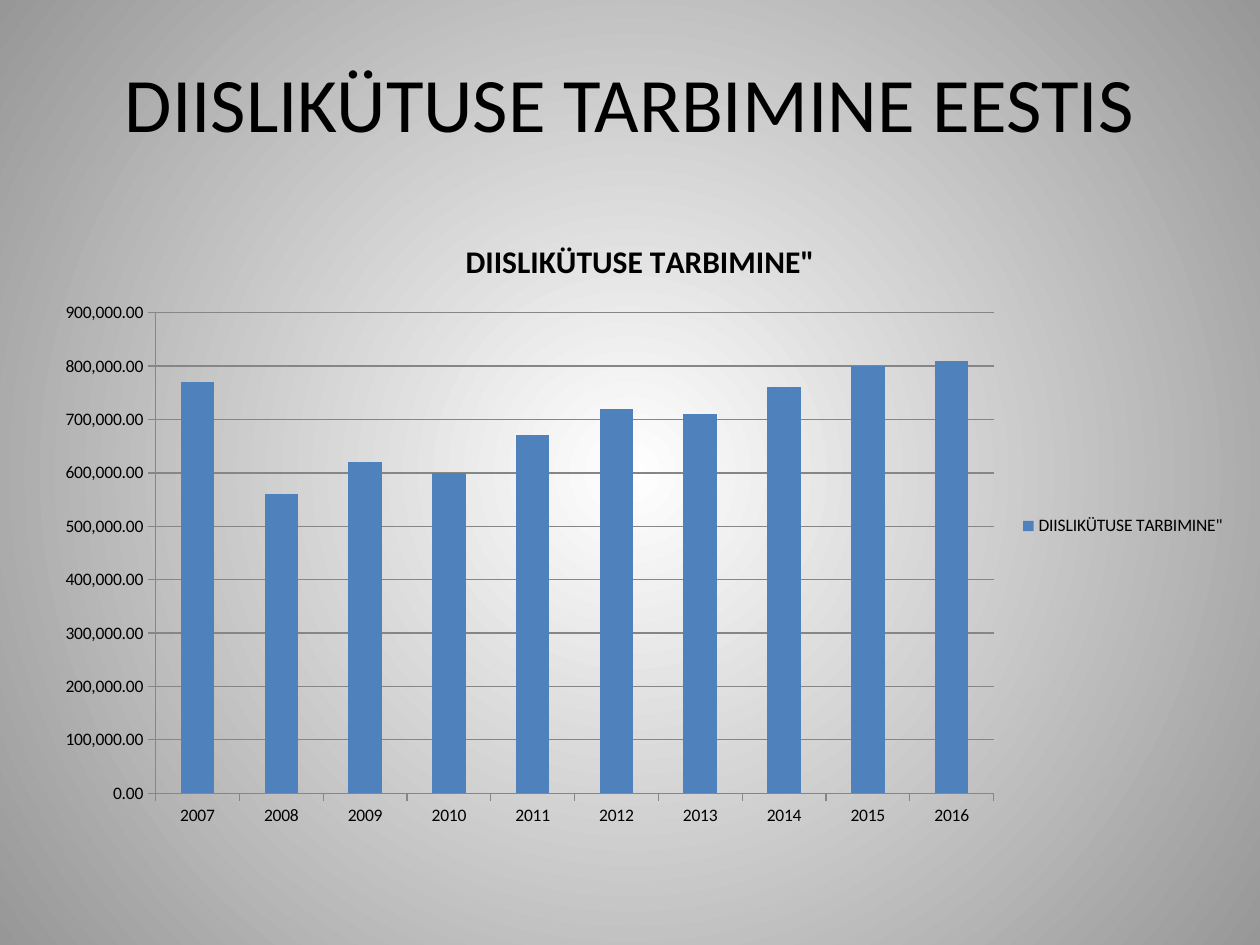
from dataclasses import dataclass

from lxml.etree import SubElement
from pptx import Presentation
from pptx.chart.data import CategoryChartData
from pptx.dml.color import RGBColor
from pptx.enum.chart import XL_CHART_TYPE, XL_LEGEND_POSITION, XL_TICK_MARK
from pptx.enum.text import MSO_ANCHOR, PP_ALIGN
from pptx.oxml.ns import qn
from pptx.util import Inches, Pt


@dataclass(frozen=True)
class Theme:
    font: str = "Calibri"
    text: RGBColor = RGBColor(0, 0, 0)
    bar: RGBColor = RGBColor(0x4F, 0x81, 0xBD)
    line: RGBColor = RGBColor(0x86, 0x86, 0x86)
    center: RGBColor = RGBColor(0xFF, 0xFF, 0xFF)
    edge: RGBColor = RGBColor(0x97, 0x97, 0x97)
    title_size: Pt = Pt(44)
    chart_title_size: Pt = Pt(18)
    label_size: Pt = Pt(10)


THEME = Theme()
HEADING = "DIISLIKÜTUSE TARBIMINE EESTIS"
SERIES_NAME = 'DIISLIKÜTUSE TARBIMINE"'
YEARS = range(2007, 2017)
CONSUMPTION = [770000, 560000, 620000, 600000, 670000,
               720000, 710000, 760000, 800000, 810000]


def set_attributes(target, values):
    for name, value in values.items():
        setattr(target, name, value)


def style_font(font, size, bold=False):
    set_attributes(font, {"name": THEME.font, "size": size, "bold": bold})
    font.color.rgb = THEME.text


def paint_background(slide):
    """Fill the slide with a gradient spreading in circles from its center."""
    fill = slide.background.fill
    fill.gradient()
    for stop, color in zip(fill.gradient_stops, (THEME.center, THEME.edge)):
        stop.color.rgb = color
    gradient = slide.background._cSld.find(".//" + qn("a:gradFill"))
    gradient.remove(gradient.find(qn("a:lin")))
    path = SubElement(gradient, qn("a:path"), {"path": "circle"})
    sides = {side: "50000" for side in "ltrb"}
    SubElement(path, qn("a:fillToRect"), sides)


def add_heading(slide, left, top, width, height):
    frame = slide.shapes.add_textbox(left, top, width, height).text_frame
    set_attributes(frame, {"word_wrap": True,
                           "vertical_anchor": MSO_ANCHOR.MIDDLE})
    paragraph = frame.paragraphs[0]
    set_attributes(paragraph, {"text": HEADING, "alignment": PP_ALIGN.CENTER})
    style_font(paragraph.runs[0].font, THEME.title_size)


def style_axes(chart):
    for axis in (chart.category_axis, chart.value_axis):
        set_attributes(axis, {"major_tick_mark": XL_TICK_MARK.OUTSIDE,
                              "minor_tick_mark": XL_TICK_MARK.NONE})
        axis.format.line.color.rgb = THEME.line
    value_axis = chart.value_axis
    set_attributes(value_axis, {"minimum_scale": 0, "maximum_scale": 900000,
                                "major_unit": 100000,
                                "has_major_gridlines": True})
    value_axis.major_gridlines.format.line.color.rgb = THEME.line
    set_attributes(value_axis.tick_labels, {"number_format": "#,##0.00",
                                            "number_format_is_linked": False})


def add_consumption_chart(slide, left, top, width, height):
    data = CategoryChartData()
    data.categories = [str(year) for year in YEARS]
    data.add_series(SERIES_NAME, CONSUMPTION)
    chart = slide.shapes.add_chart(XL_CHART_TYPE.COLUMN_CLUSTERED,
                                   left, top, width, height, data).chart
    style_font(chart.font, THEME.label_size)
    set_attributes(chart, {"has_title": True, "has_legend": True})
    set_attributes(chart.legend, {"position": XL_LEGEND_POSITION.RIGHT,
                                  "include_in_layout": False})

    paragraph = chart.chart_title.text_frame.paragraphs[0]
    paragraph.text = SERIES_NAME
    style_font(paragraph.runs[0].font, THEME.chart_title_size, bold=True)

    plot = chart.plots[0]
    set_attributes(plot, {"gap_width": 150, "vary_by_categories": False})
    bar_fill = plot.series[0].format.fill
    bar_fill.solid()
    bar_fill.fore_color.rgb = THEME.bar
    style_axes(chart)


def main():
    presentation = Presentation()
    set_attributes(presentation, {"slide_width": Inches(10),
                                  "slide_height": Inches(7.5)})
    slide = presentation.slides.add_slide(presentation.slide_layouts[6])
    paint_background(slide)
    add_heading(slide, Inches(0.5), Inches(0.3), Inches(9), Inches(1.01))
    add_consumption_chart(slide, Inches(0.33), Inches(1.7),
                          Inches(9.5), Inches(4.95))
    presentation.save("out.pptx")


if __name__ == "__main__":
    main()
